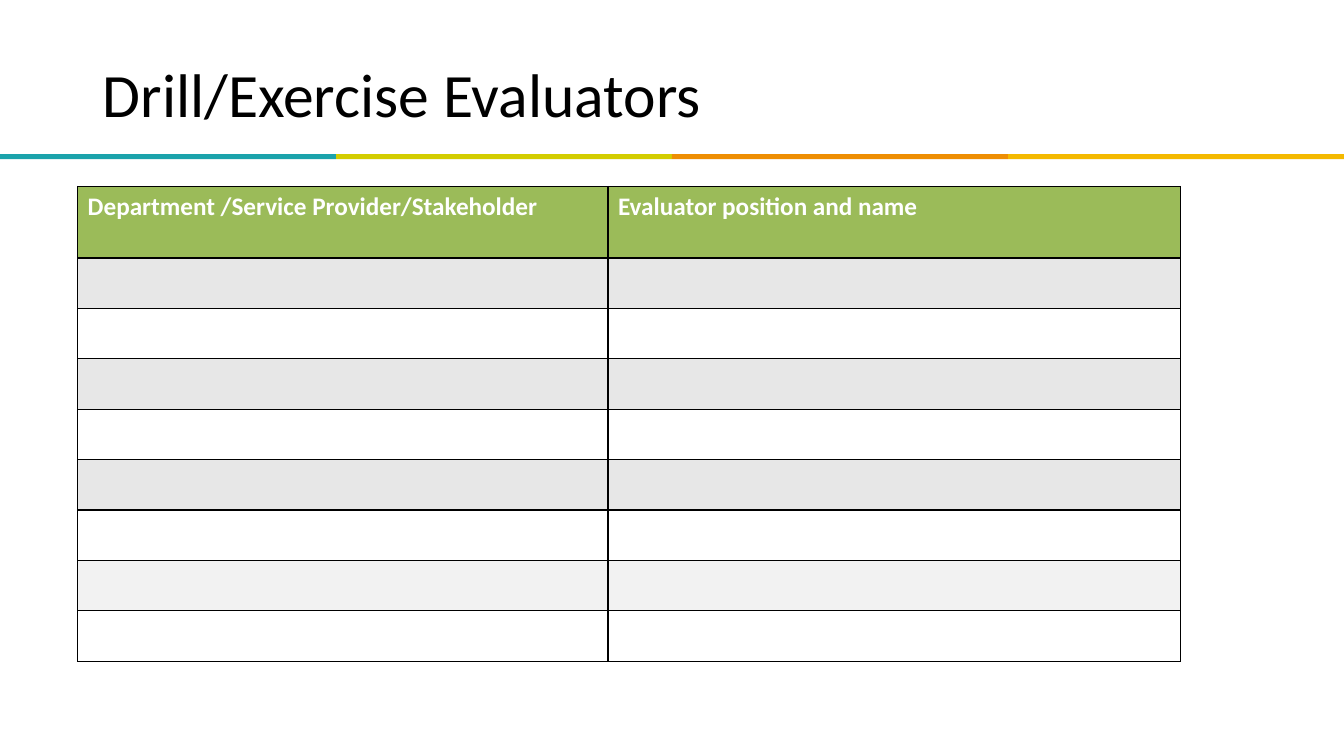
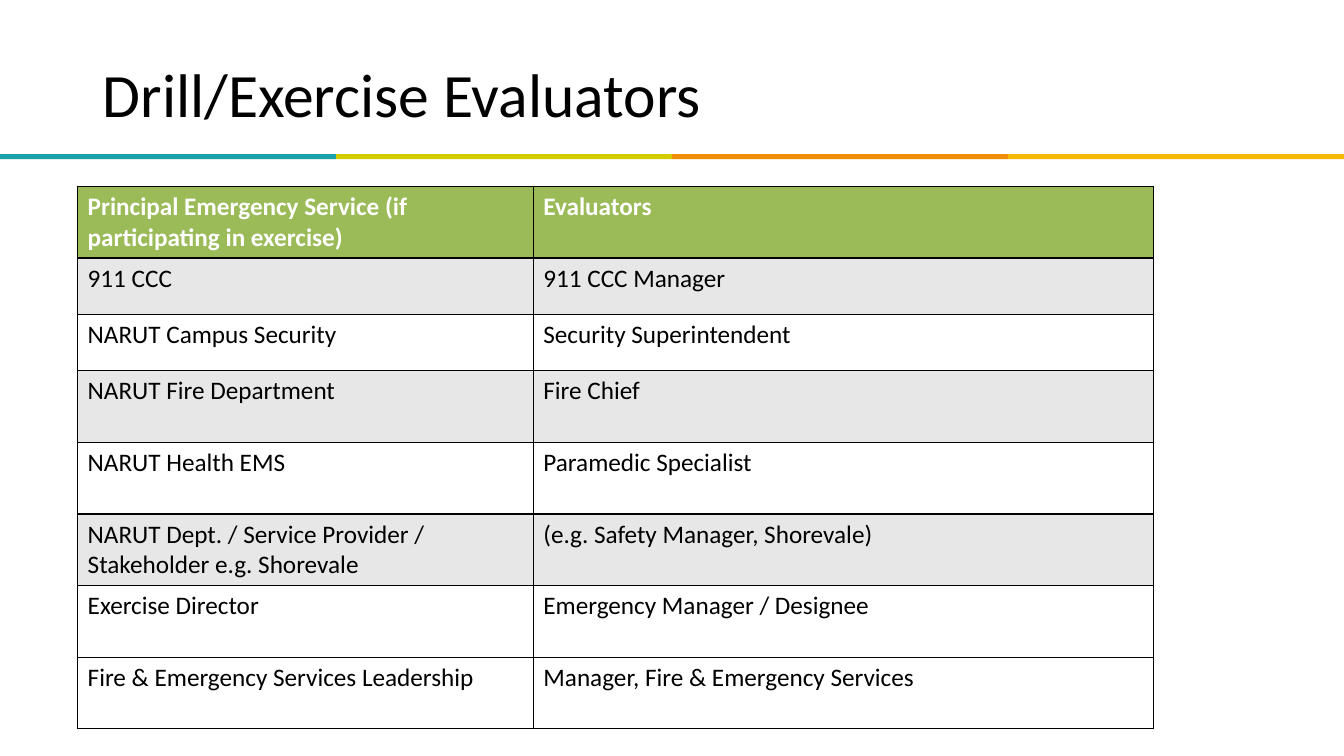
"""Build two slides that list the evaluators of a drill or exercise."""
from dataclasses import dataclass

from lxml.etree import SubElement as Sub
from pptx import Presentation
from pptx.dml.color import RGBColor as Rgb
from pptx.enum.shapes import MSO_SHAPE as Shape
from pptx.enum.text import MSO_ANCHOR as Anchor
from pptx.oxml.ns import qn
from pptx.slide import Slide
from pptx.table import _Cell as Cell
from pptx.text.text import TextFrame as Frame
from pptx.util import Inches, Pt

FONT = "Calibri"
WIDE, HIGH = 13.33, 7.5
HUES = {
    "teal": "1BA3AB", "lime": "D3CD00", "orange": "EE8E03", "gold": "F4B900",
    "green": "9BBB59", "grey": "E7E7E7", "pale": "F2F2F2",
    "white": "FFFFFF", "black": "000000",
}
BANDS = ("teal", "lime", "orange", "gold")
TITLE = "Drill/Exercise Evaluators"


@dataclass(frozen=True)
class Row:
    """One table row: its texts, height and fill."""
    texts: tuple[str, str]
    high: float
    fill: str


@dataclass(frozen=True)
class Grid:
    """A table: its column widths and rows."""
    cols: tuple[float, float]
    rows: list[Row]


def hue(name: str) -> Rgb:
    """Return the named colour."""
    return Rgb.from_string(HUES[name])


def write(frame: Frame, text: str, *, size: float = 18, color: str = "black",
          bold: bool = False, space: float = 1.0) -> None:
    """Put one formatted paragraph in a text frame."""
    frame.word_wrap = True
    para = frame.paragraphs[0]
    para.line_spacing = space
    run = para.add_run()
    run.text = text
    font = run.font
    font.name, font.size, font.bold = FONT, Pt(size), bold
    font.color.rgb = hue(color)


def border(cell: Cell) -> None:
    """Give a cell a thin black line on each side."""
    props = cell._tc.get_or_add_tcPr()
    for side in ("lnL", "lnR", "lnT", "lnB"):
        line = Sub(props, qn(f"a:{side}"), w=str(Pt(1)))
        fill = Sub(line, qn("a:solidFill"))
        Sub(fill, qn("a:srgbClr"), val=HUES["black"])


def frame(slide: Slide) -> None:
    """Draw the title and the colour bands that the slides share."""
    step = WIDE / len(BANDS)
    for spot, name in enumerate(BANDS):
        band = slide.shapes.add_shape(
            Shape.RECTANGLE, Inches(spot * step), Inches(1.53), Inches(step), Inches(0.05))
        band.shadow.inherit = False
        band.fill.solid()
        band.fill.fore_color.rgb = hue(name)
        band.line.fill.background()
    box = slide.shapes.add_textbox(Inches(0.92), Inches(0.4), Inches(8.31), Inches(1.13))
    box.text_frame.vertical_anchor = Anchor.MIDDLE
    write(box.text_frame, TITLE, size=44, space=0.9)


def draw(slide: Slide, grid: Grid) -> None:
    """Draw a table whose first row is the header."""
    high = sum(row.high for row in grid.rows)
    table = slide.shapes.add_table(
        len(grid.rows), len(grid.cols), Inches(0.77), Inches(1.85),
        Inches(sum(grid.cols)), Inches(high)).table
    table.horz_banding = False
    for col, wide in zip(table.columns, grid.cols):
        col.width = Inches(wide)
    for spot, row in enumerate(grid.rows):
        table.rows[spot].height = Inches(row.high)
        head = spot == 0
        for cell, text in zip(table.rows[spot].cells, row.texts):
            border(cell)
            cell.fill.solid()
            cell.fill.fore_color.rgb = hue(row.fill)
            if text:
                write(cell.text_frame, text, color="white" if head else "black", bold=head)


BLANK = ("", "")
FILLS = ("grey", "white", "grey", "white", "grey", "white", "pale", "white")
GRIDS = (
    Grid((5.26, 5.68), [
        Row(("Department /Service Provider/Stakeholder", "Evaluator position and name"),
            0.71, "green"),
        *(Row(BLANK, 0.5, fill) for fill in FILLS),
    ]),
    Grid((4.52, 6.15), [
        Row(("Principal Emergency Service (if participating in exercise)", "Evaluators"),
            0.71, "green"),
        Row(("911 CCC", "911 CCC Manager"), 0.56, "grey"),
        Row(("NARUT Campus Security", "Security Superintendent"), 0.56, "white"),
        Row(("NARUT Fire Department", "Fire Chief"), 0.71, "grey"),
        Row(("NARUT Health EMS", "Paramedic Specialist"), 0.71, "white"),
        Row(("NARUT Dept. / Service Provider / Stakeholder e.g. Shorevale",
             "(e.g. Safety Manager, Shorevale)"), 0.71, "grey"),
        Row(("Exercise Director", "Emergency Manager / Designee"), 0.71, "white"),
        Row(("Fire & Emergency Services Leadership", "Manager, Fire & Emergency Services"),
            0.71, "white"),
    ]),
)


def main() -> None:
    """Build and save the deck."""
    deck = Presentation()
    deck.slide_width, deck.slide_height = Inches(WIDE), Inches(HIGH)
    for grid in GRIDS:
        slide = deck.slides.add_slide(deck.slide_layouts[6])
        frame(slide)
        draw(slide, grid)
    deck.save("out.pptx")


if __name__ == "__main__":
    main()
